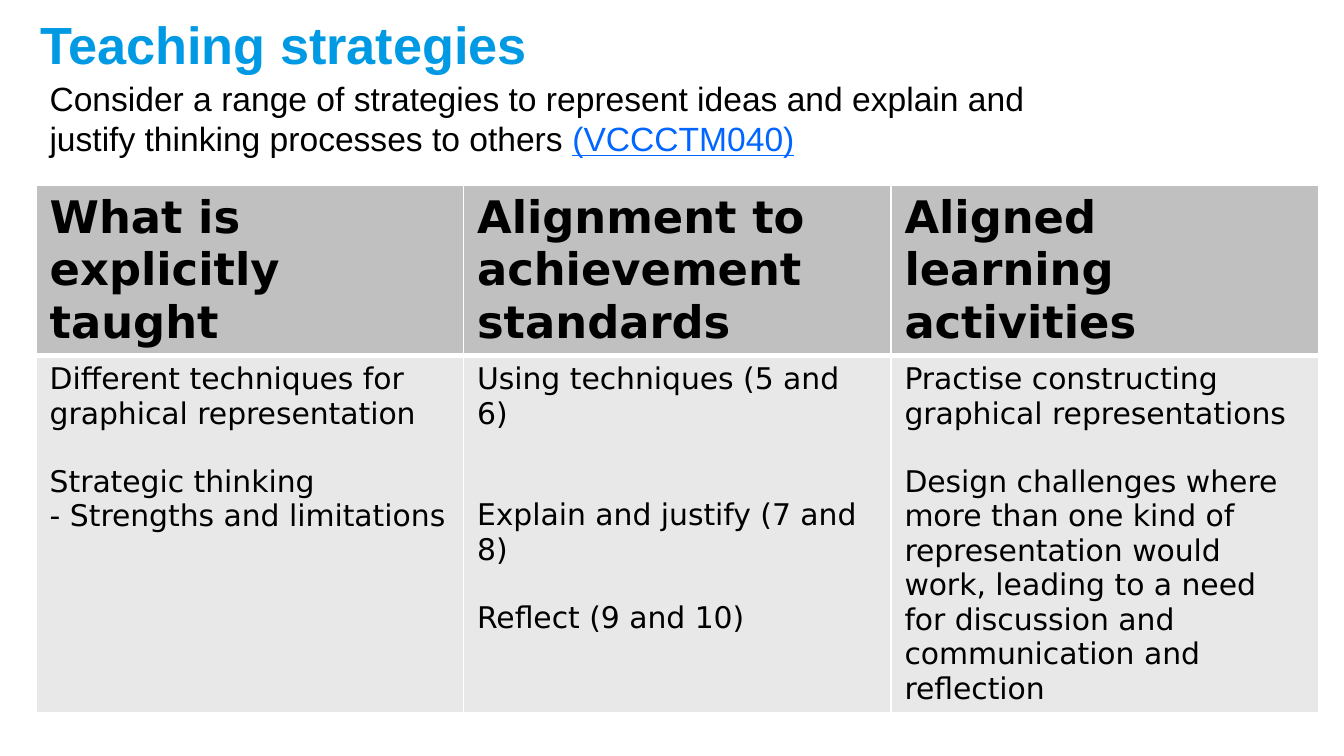
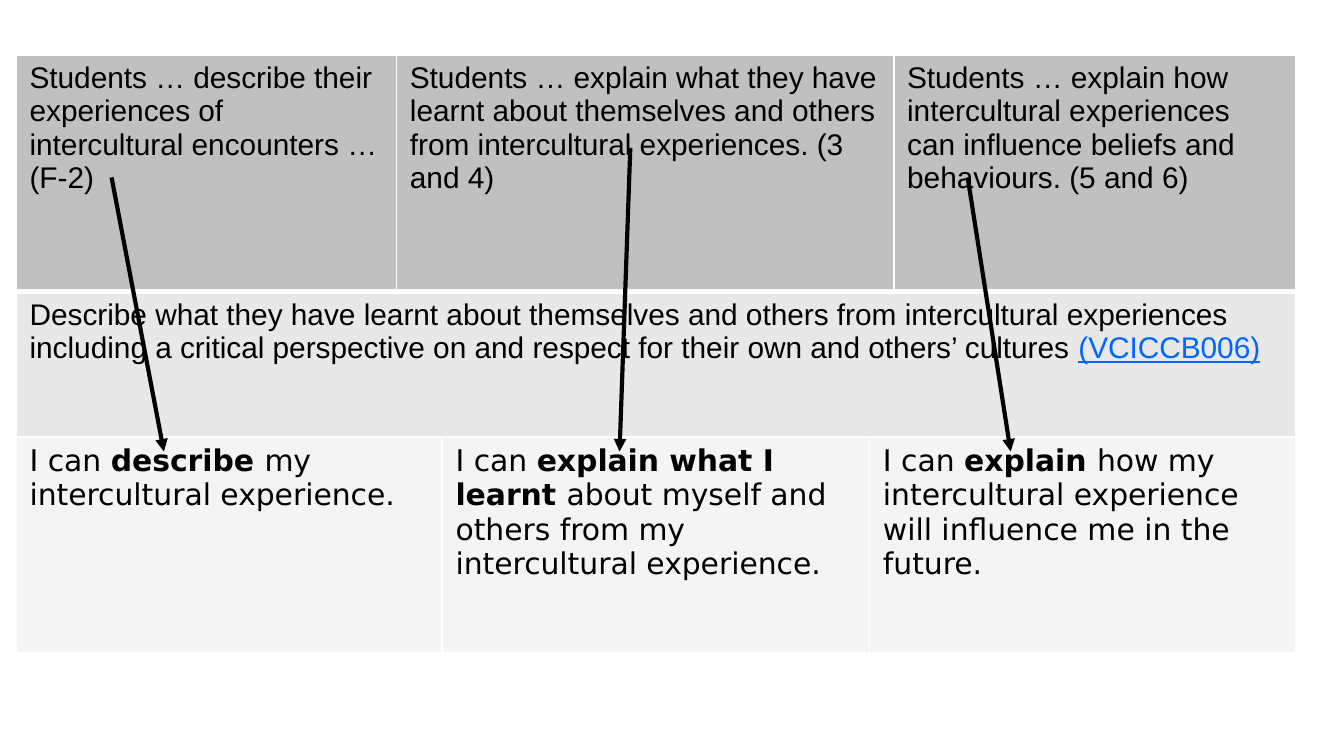
from lxml.etree import SubElement
from pptx import Presentation
from pptx.dml.color import RGBColor
from pptx.enum.shapes import MSO_CONNECTOR
from pptx.enum.text import MSO_ANCHOR, PP_ALIGN
from pptx.oxml.ns import qn
from pptx.util import Inches, Pt

BLACK = RGBColor(0x00, 0x00, 0x00)
WHITE = RGBColor(0xFF, 0xFF, 0xFF)
TITLE_BLUE = RGBColor(0x00, 0x99, 0xE3)
LINK_BLUE = RGBColor(0x00, 0x66, 0xFF)
HEADER_GREY = RGBColor(0xC0, 0xC0, 0xC0)
BODY_GREY = RGBColor(0xE8, 0xE8, 0xE8)
PALE_GREY = RGBColor(0xF4, 0xF4, 0xF4)
SANS = "Arial"
TABLE_FONT = "DejaVu Sans"
TITLE_ONLY, BLANK = 5, 6

CODE = dict(color=LINK_BLUE, underline=True)
STRONG = dict(bold=True)


def add_span(para, text, font=SANS, size=16, color=BLACK, bold=False, underline=False):
    span = para.add_run()
    span.text = text
    span.font.name = font
    span.font.size = Pt(size)
    span.font.color.rgb = color
    span.font.bold = bold
    span.font.underline = underline


def fill_frame(frame, paragraphs, gaps=(), **style):
    for index, spans in enumerate(paragraphs):
        para = frame.paragraphs[0] if index == 0 else frame.add_paragraph()
        para.alignment = PP_ALIGN.LEFT
        para.space_before = Pt(gaps[index] if gaps else 0)
        for text, changes in spans:
            add_span(para, text, **{**style, **changes})


def plain(*lines):
    return [[(line, {})] for line in lines]


def set_borders(cell, widths):
    properties = cell._tc.get_or_add_tcPr()
    for index, (side, width) in enumerate(zip("LRTB", widths)):
        line = SubElement(properties, qn(f"a:ln{side}"), w=str(Pt(width)))
        fill = SubElement(line, qn("a:solidFill"))
        SubElement(fill, qn("a:srgbClr"), val=str(WHITE))
        properties.insert(index, line)


class Slides:
    def __init__(self):
        self.deck = Presentation()
        self.deck.slide_width = Inches(10)
        self.deck.slide_height = Inches(10) * 9 // 16
        self.page = None

    def start(self, layout):
        self.page = self.deck.slides.add_slide(self.deck.slide_layouts[layout])
        self.page.background.fill.solid()
        self.page.background.fill.fore_color.rgb = WHITE

    def title(self, text):
        box = self.page.shapes.title
        box.left, box.top = Inches(0.2), Inches(0.12)
        box.width, box.height = Inches(9.53), Inches(0.41)
        box.text_frame.vertical_anchor = MSO_ANCHOR.MIDDLE
        fill_frame(box.text_frame, plain(text), size=28, color=TITLE_BLUE, bold=True)

    def text(self, left, top, width, height, paragraphs, **style):
        box = self.page.shapes.add_textbox(
            Inches(left), Inches(top), Inches(width), Inches(height))
        box.text_frame.word_wrap = True
        fill_frame(box.text_frame, paragraphs, **style)

    def table(self, left, top, columns, rows):
        heights = [row["height"] for row in rows]
        table = self.page.shapes.add_table(
            len(rows), len(columns), Inches(left), Inches(top),
            Inches(sum(columns)), Inches(sum(heights))).table
        table.horz_banding = False
        for column, width in zip(table.columns, columns):
            column.width = Inches(width)
        for index, row in enumerate(rows):
            table.rows[index].height = Inches(row["height"])
            above, below = (3 if edge == 1 else 1 for edge in (index, index + 1))
            for cell in table.rows[index].cells:
                cell.fill.solid()
                cell.fill.fore_color.rgb = row["fill"]
                set_borders(cell, (1, 1, above, below))
            start = 0
            spans = row.get("spans", [1] * len(row["cells"]))
            for span, content in zip(spans, row["cells"]):
                cell = table.cell(index, start)
                if span > 1:
                    cell.merge(table.cell(index, start + span - 1))
                paragraphs, gaps = content if isinstance(content, tuple) else (content, ())
                fill_frame(cell.text_frame, paragraphs, gaps, **row["style"])
                start += span

    def arrow(self, start, end):
        line = self.page.shapes.add_connector(
            MSO_CONNECTOR.STRAIGHT, *(Inches(value) for value in (*start, *end)))
        line.line.color.rgb = BLACK
        line.line.width = Pt(2.25)
        SubElement(line.line._get_or_add_ln(), qn("a:tailEnd"), type="triangle")
        SubElement(line._element.spPr, qn("a:effectLst"))


def teaching_strategies(slides):
    slides.start(TITLE_ONLY)
    slides.title("Teaching strategies")
    headings = ("What is explicitly taught", "Alignment to achievement standards",
                "Aligned learning activities")
    taught = plain("Different techniques for graphical representation",
                   "Strategic thinking", "- Strengths and limitations")
    standards = plain("Using techniques (5 and 6)", "Explain and justify (7 and 8)",
                      "Reflect (9 and 10)")
    activities = plain(
        "Practise constructing graphical representations",
        "Design challenges where more than one kind of representation would work, "
        "leading to a need for discussion and communication and reflection")
    slides.table(0.27, 1.38, [3.18] * 3, [
        dict(height=0.64, fill=HEADER_GREY, cells=[plain(text) for text in headings],
             style=dict(font=TABLE_FONT, size=24, bold=True)),
        dict(height=2.55, fill=BODY_GREY, style=dict(font=TABLE_FONT),
             cells=[(taught, (0, 18, 0)), (standards, (0, 36, 18)),
                    (activities, (0, 18))]),
    ])
    slides.text(0.27, 0.53, 7.59, 1.11, [
        [("Consider a range of strategies to represent ideas and explain and", {})],
        [("justify thinking processes to others ", {}), ("(VCCCTM040)", CODE)],
    ], size=18)


def intercultural_progression(slides):
    slides.start(BLANK)
    standards = (
        "Students … describe their experiences of intercultural encounters … (F-2)",
        "Students … explain what they have learnt about themselves and others from "
        "intercultural experiences. (3 and 4)",
        "Students … explain how intercultural experiences can influence beliefs and "
        "behaviours. (5 and 6)")
    description = [[
        ("Describe what they have learnt about themselves and others from intercultural "
         "experiences including a critical perspective on and respect for their own and "
         "others’ cultures ", {}),
        ("(VCICCB006)", CODE)]]
    goals = (("describe ", "my intercultural experience."),
             ("explain what I learnt ",
              "about myself and others from my intercultural experience."),
             ("explain ", "how my intercultural experience will influence me in the future."))
    slides.table(0.12, 0.41, [2.83, 0.34, 3.18, 0.18, 2.99], [
        dict(height=1.76, fill=HEADER_GREY, spans=(1, 3, 1), style={},
             cells=[plain(text) for text in standards]),
        dict(height=1.08, fill=BODY_GREY, spans=(5,), style={}, cells=[description]),
        dict(height=1.61, fill=PALE_GREY, spans=(2, 1, 2), style=dict(font=TABLE_FONT),
             cells=[[[("I can ", {}), (verb, STRONG), (rest, {})]] for verb, rest in goals]),
    ])
    arrow_end = 3.36
    for start, end in (((4.69, 1.1), 4.61), ((0.83, 1.32), 1.22), ((7.2, 1.32), 7.52)):
        slides.arrow(start, (end, arrow_end))


def main():
    slides = Slides()
    teaching_strategies(slides)
    intercultural_progression(slides)
    slides.deck.save("out.pptx")


if __name__ == "__main__":
    main()
